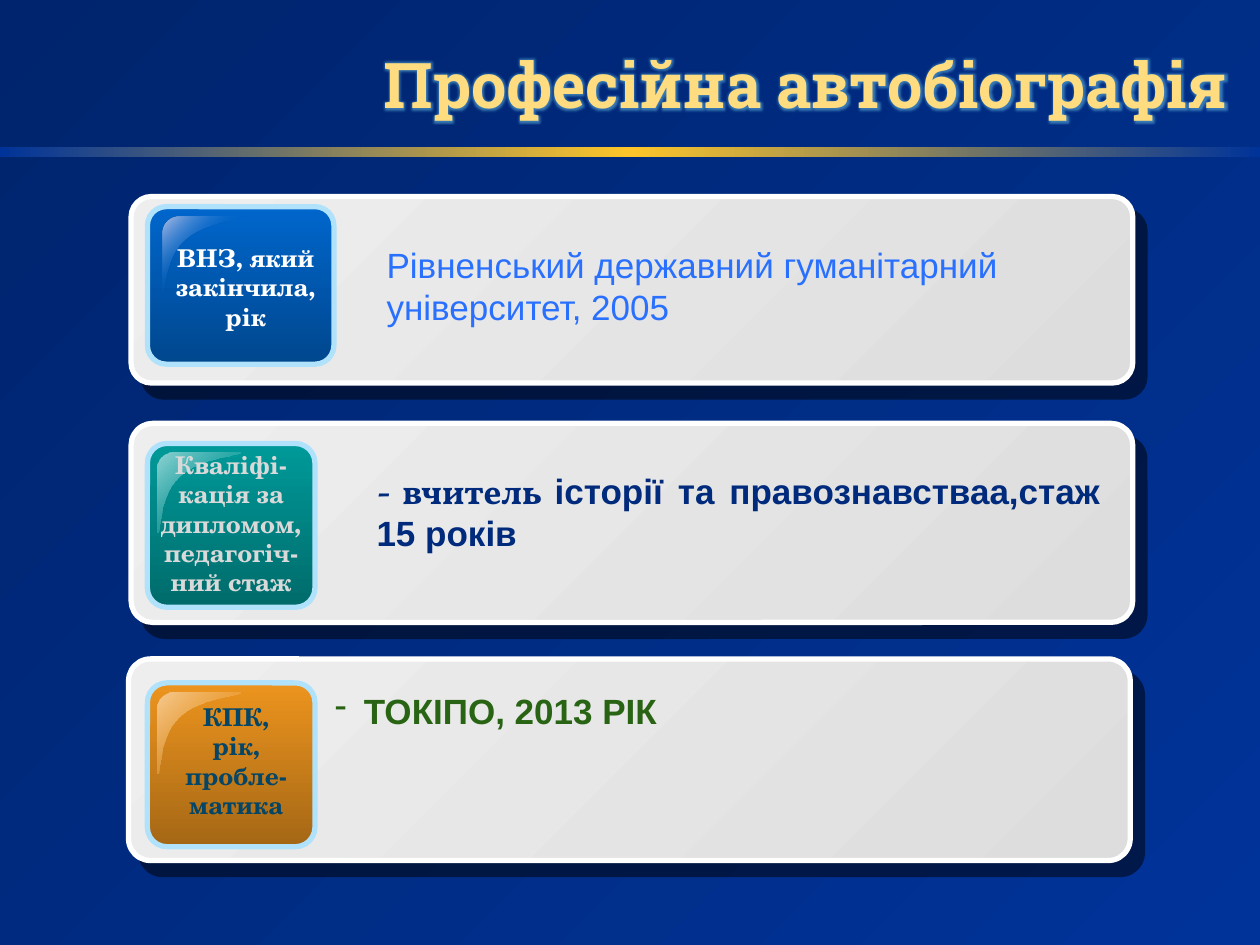
from lxml import etree
from pptx import Presentation
from pptx.dml.color import RGBColor
from pptx.enum.shapes import MSO_SHAPE
from pptx.enum.text import MSO_ANCHOR, MSO_AUTO_SIZE, PP_ALIGN
from pptx.oxml import parse_xml
from pptx.oxml.ns import qn
from pptx.util import Inches, Pt

RECT, ROUNDED = MSO_SHAPE.RECTANGLE, MSO_SHAPE.ROUNDED_RECTANGLE
LEFT, CENTER, RIGHT, JUSTIFY = PP_ALIGN.LEFT, PP_ALIGN.CENTER, PP_ALIGN.RIGHT, PP_ALIGN.JUSTIFY
DRAWING = "http://schemas.openxmlformats.org/drawingml/2006/main"
LABEL_FONT = "TeX Gyre Schola"

BACKGROUND = [(0, "00246D"), (100, "003399")]
BAND = [(0, "003399"), (50, "FDC529"), (100, "003399")]
PANEL = [(0, "EEEEEE"), (100, "DDDDDD")]
TITLE = "Професійна автобіографія"

# Boxes are left, top, width, height; spans are (text, font, bold)
ROWS = [
    {
        "panel": (1.04, 1.56, 7.95, 1.48),
        "tile": (1.17, 1.64, 1.48, 1.25),
        "tile_fill": [(0, "0066CC"), (100, "00478E")],
        "gloss": (1.29, 1.72),
        "gloss_fill": [(0, "B5C0E5"), (50, "0066CC", 0), (100, "B5C0E5")],
        "label_box": (1.17, 1.88, 1.56, 0.81),
        "label": ["ВНЗ, який закінчила, рік"],
        "label_color": "FFFFFF",
        "body_box": (2.97, 1.88, 5.86, 0.77),
        "body": [("Рівненський державний гуманітарний університет, 2005", "Arial", False)],
        "body_color": "2970FF",
        "align": LEFT,
    },
    {
        "panel": (1.04, 3.36, 7.95, 1.58),
        "tile": (1.17, 3.52, 1.33, 1.3),
        "tile_fill": [(0, "009999"), (100, "006B6B")],
        "gloss": (1.25, 3.59),
        "gloss_fill": [(0, "93D4D4"), (100, "009999", 0)],
        "label_box": (1.17, 3.52, 1.33, 1.28),
        "label": ["Кваліфі-кація за дипломом, педагогіч-ний стаж"],
        "label_color": "D9D9D9",
        "body_box": (2.89, 3.68, 5.94, 0.77),
        "body": [("- вчитель ", "Vollkorn", True),
                 ("історії та правознавстваа,стаж 15 років", "Arial", True)],
        "body_color": "002A7C",
        "align": JUSTIFY,
    },
    {
        "panel": (1.02, 5.23, 7.95, 1.6),
        "tile": (1.17, 5.42, 1.33, 1.3),
        "tile_fill": [(0, "EC941E"), (100, "A56715")],
        "gloss": (1.25, 5.5),
        "gloss_fill": [(0, "F6CB92"), (100, "EC941E", 0)],
        "label_box": (1.33, 5.52, 1.09, 1.04),
        "label": ["КПК, рік,", "пробле-матика"],
        "label_color": "054566",
        "body_box": (2.56, 5.42, 6.38, 0.44),
        "body": [("ТОКІПО, 2013 РІК", "Arial", True)],
        "body_color": "296414",
        "align": JUSTIFY,
        "bullet": "-",
    },
]

# Cubic curves of the gloss, as offsets from its top left corner
GLOSS_CURVES = [
    [(0.13, 0), (0.06, 0), (0, 0.06), (0, 0.13)],
    [(0, 0.64), (0.03, 0.65), (0.01, 0.33), (0.18, 0.19)],
    [(0.18, 0.19), (0.34, 0.04), (0.66, 0.03), (0.66, 0)],
]
CURVE_STEPS = 12


def rgb(color):
    return RGBColor.from_string(color)


def paint_gradient(fill, element, stops, angle):
    """Fill with a linear gradient; a stop is (percent, colour[, opacity percent])."""
    fill.solid()
    solid = element.xpath(".//a:solidFill")[0]
    gradient = etree.Element(qn("a:gradFill"), rotWithShape="1")
    stop_list = etree.SubElement(gradient, qn("a:gsLst"))
    for percent, color, *opacity in stops:
        stop = etree.SubElement(stop_list, qn("a:gs"), pos=str(percent * 1000))
        shade = etree.SubElement(stop, qn("a:srgbClr"), val=color)
        if opacity:
            etree.SubElement(shade, qn("a:alpha"), val=str(opacity[0] * 1000))
    etree.SubElement(gradient, qn("a:lin"), ang=str(angle * 60000), scaled="0")
    solid.getparent().replace(solid, gradient)


def add_block(page, kind, box, stops, angle, line=None, corner=None):
    block = page.shapes.add_shape(kind, *map(Inches, box))
    block.shadow.inherit = False
    paint_gradient(block.fill, block._element.spPr, stops, angle)
    if corner:
        block.adjustments[0] = corner
    if line:
        block.line.color.rgb = rgb(line)
        block.line.width = Pt(3)
    else:
        block.line.fill.background()
    return block


def add_drop_shadow(shape):
    effects = shape._element.spPr.find(qn("a:effectLst"))
    effects.append(parse_xml(
        f'<a:outerShdw xmlns:a="{DRAWING}" blurRad="0" dist="{Pt(10.6)}" dir="{49 * 60000}" '
        'algn="ctr" rotWithShape="0"><a:srgbClr val="000000"><a:alpha val="50000"/>'
        '</a:srgbClr></a:outerShdw>'))


def curve_point(curve, t):
    weights = ((1 - t) ** 3, 3 * t * (1 - t) ** 2, 3 * t ** 2 * (1 - t), t ** 3)
    return tuple(sum(w * point[axis] for w, point in zip(weights, curve)) for axis in (0, 1))


def add_gloss(page, corner, stops):
    left, top = corner
    points = [curve_point(curve, step / CURVE_STEPS)
              for curve in GLOSS_CURVES for step in range(CURVE_STEPS + 1)]
    points = [(Inches(left + x), Inches(top + y)) for x, y in points]
    builder = page.shapes.build_freeform(*points[0])
    builder.add_line_segments(points[1:], close=True)
    gloss = builder.convert_to_shape()
    gloss.shadow.inherit = False
    paint_gradient(gloss.fill, gloss._element.spPr, stops, 45)
    gloss.line.fill.background()


def add_text(page, box, paragraphs, size, color, align, bullet=None):
    """Add a text box; each paragraph is a list of (text, font, bold) spans."""
    text_box = page.shapes.add_textbox(*map(Inches, box))
    frame = text_box.text_frame
    frame.word_wrap = True
    frame.auto_size = MSO_AUTO_SIZE.SHAPE_TO_FIT_TEXT
    for index, spans in enumerate(paragraphs):
        para = frame.add_paragraph() if index else frame.paragraphs[0]
        para.alignment = align
        if bullet:
            properties = para._p.get_or_add_pPr()
            properties.set("marL", str(Inches(0.23)))
            properties.set("indent", str(Inches(-0.23)))
            etree.SubElement(properties, qn("a:buChar"), char=bullet)
        for text, font, bold in spans:
            span = para.add_run()
            span.text = text
            span.font.name = font
            span.font.size = Pt(size)
            span.font.bold = bold
            span.font.color.rgb = rgb(color)
    return text_box


def add_glow(text_box):
    for span in text_box.text_frame.paragraphs[0].runs:
        fill = span._r.rPr.find(qn("a:solidFill"))
        fill.addnext(parse_xml(
            f'<a:effectLst xmlns:a="{DRAWING}"><a:glow rad="{Pt(5)}"><a:srgbClr val="5FB0D8">'
            '<a:alpha val="60000"/></a:srgbClr></a:glow></a:effectLst>'))


def add_row(page, row):
    panel = add_block(page, ROUNDED, row["panel"], PANEL, 45, "FFFFFF", 0.109)
    add_drop_shadow(panel)
    add_block(page, ROUNDED, row["tile"], row["tile_fill"], 90, "B1E2FB", 0.119)
    add_gloss(page, row["gloss"], row["gloss_fill"])
    label = [[(text, LABEL_FONT, True)] for text in row["label"]]
    add_text(page, row["label_box"], label, 14, row["label_color"], CENTER)
    add_text(page, row["body_box"], [row["body"]], 20, row["body_color"],
             row["align"], row.get("bullet"))


def main():
    deck = Presentation()
    deck.slide_width, deck.slide_height = Inches(10), Inches(7.5)
    page = deck.slides.add_slide(deck.slide_layouts[6])
    paint_gradient(page.background.fill, page._element, BACKGROUND, 45)
    add_block(page, RECT, (0, 1.17, 10, 0.08), BAND, 0)
    title = add_text(page, (1.59, 0.35, 8.25, 0.62), [[(TITLE, "Roboto Slab", True)]],
                     36, "FEDC7F", RIGHT)
    title.text_frame.auto_size = MSO_AUTO_SIZE.NONE
    title.text_frame.vertical_anchor = MSO_ANCHOR.MIDDLE
    add_glow(title)
    for row in ROWS:
        add_row(page, row)
    deck.save("out.pptx")


if __name__ == "__main__":
    main()
